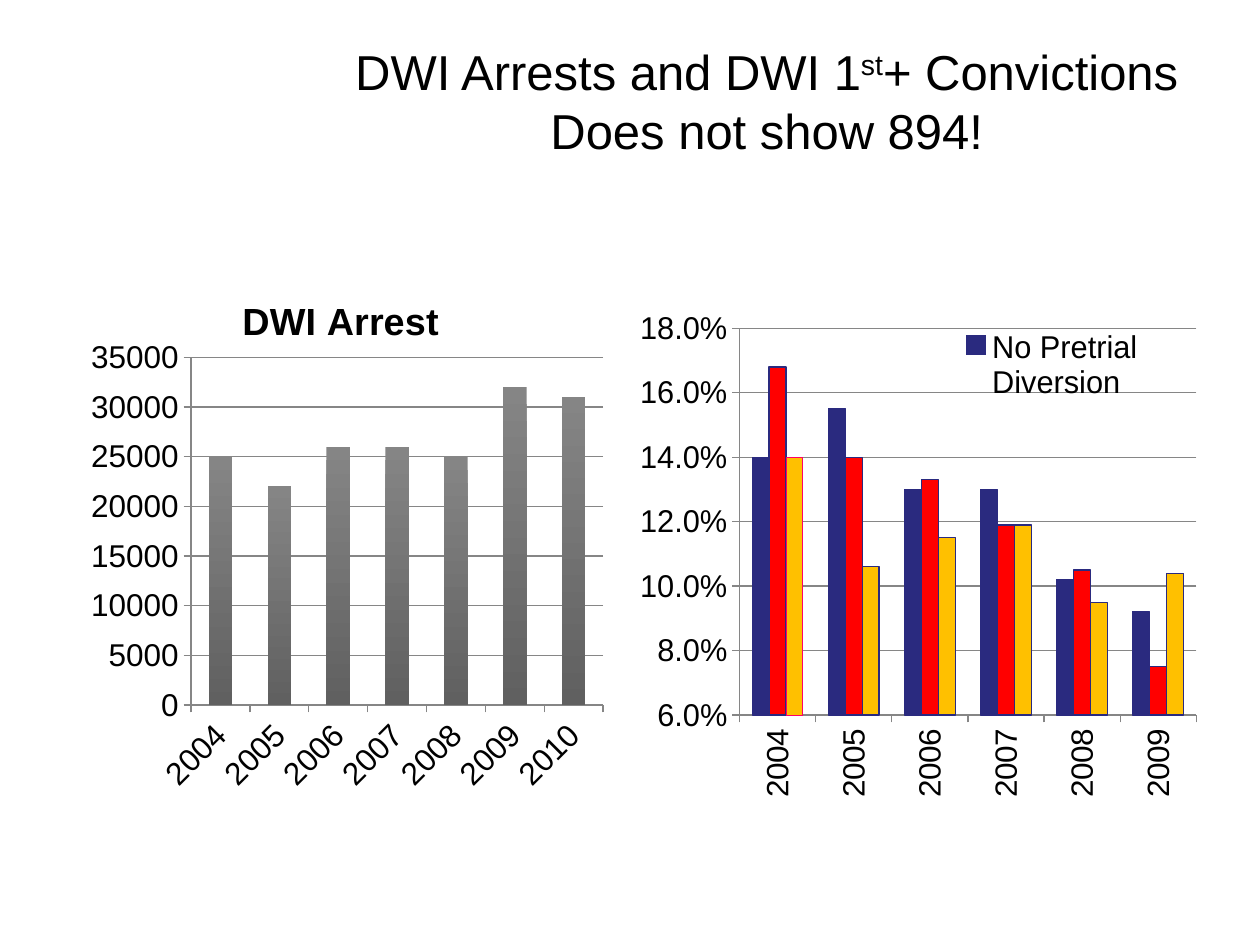
from lxml import etree
from pptx import Presentation
from pptx.chart.data import CategoryChartData
from pptx.dml.color import RGBColor
from pptx.enum.chart import XL_CHART_TYPE, XL_LEGEND_POSITION, XL_TICK_MARK
from pptx.enum.text import MSO_ANCHOR, PP_ALIGN
from pptx.oxml.ns import qn
from pptx.util import Inches, Pt

COLUMNS = XL_CHART_TYPE.COLUMN_CLUSTERED
OUTSIDE = XL_TICK_MARK.OUTSIDE
LEGEND_RIGHT = XL_LEGEND_POSITION.RIGHT
CENTER = PP_ALIGN.CENTER
MIDDLE = MSO_ANCHOR.MIDDLE

BLACK = RGBColor(0x00, 0x00, 0x00)
AXIS_GRAY = RGBColor(0x86, 0x86, 0x86)
LIGHT_GRAY = RGBColor(0x85, 0x85, 0x85)
DARK_GRAY = RGBColor(0x60, 0x60, 0x60)
NAVY = RGBColor(0x2A, 0x2A, 0x7F)
RED = RGBColor(0xFF, 0x00, 0x00)
AMBER = RGBColor(0xFF, 0xC0, 0x00)
PINK = RGBColor(0xFF, 0x00, 0x66)


def set_layout(parent, index, **fractions):
    """Place a chart part by fractions of the chart area."""
    for old in parent.findall(qn("c:layout")):
        parent.remove(old)
    layout = etree.Element(qn("c:layout"))
    manual = etree.SubElement(layout, qn("c:manualLayout"))
    if parent.tag == qn("c:plotArea"):
        etree.SubElement(manual, qn("c:layoutTarget")).set("val", "inner")
    for side in ("x", "y"):
        etree.SubElement(manual, qn(f"c:{side}Mode")).set("val", "edge")
    for side, value in fractions.items():
        etree.SubElement(manual, qn(f"c:{side}")).set("val", str(value))
    parent.insert(index, layout)


def add_columns(left, top, data, label_angle):
    """Add a column chart with the shared axis styling."""
    chart = slide.shapes.add_chart(
        COLUMNS, Inches(left), Inches(top), Inches(4.42), Inches(4.45), data).chart
    chart.font.name = "Arial"
    chart.font.size = Pt(18)
    chart.font.color.rgb = BLACK
    chart.has_title = False
    chart.has_legend = False
    plot = chart.plots[0]
    plot.gap_width = 150
    plot.overlap = 0
    plot.vary_by_categories = False
    for axis in (chart.category_axis, chart.value_axis):
        axis.major_tick_mark = OUTSIDE
        axis.format.line.color.rgb = AXIS_GRAY
        axis.tick_labels.font.size = Pt(18)
    chart.value_axis.has_major_gridlines = True
    chart.value_axis.major_gridlines.format.line.color.rgb = AXIS_GRAY
    label_body = chart.category_axis._element.find(qn("c:txPr")).find(qn("a:bodyPr"))
    label_body.set("rot", str(label_angle * 60000))
    label_body.set("vert", "horz")
    return chart


prs = Presentation()
prs.slide_width = Inches(10)
prs.slide_height = Inches(7.5)
slide = prs.slides.add_slide(prs.slide_layouts[6])

# Heading
heading = slide.shapes.add_textbox(Inches(2.67), Inches(0.17), Inches(6.83), Inches(1.25))
heading.text_frame.word_wrap = True
heading.text_frame.vertical_anchor = MIDDLE
heading_line = heading.text_frame.paragraphs[0]
heading_line.alignment = CENTER
for words in ("DWI Arrests and DWI 1", "st", "+ Convictions", "Does not show 894!"):
    if words.startswith("Does"):
        heading_line.add_line_break()
    run = heading_line.add_run()
    run.text = words
    run.font.name = "Arial"
    run.font.size = Pt(28)
    run.font.color.rgb = BLACK
    if words == "st":
        run._r.get_or_add_rPr().set("baseline", "30000")

# Arrests per year
arrest_data = CategoryChartData(number_format="General")
arrest_data.categories = [str(year) for year in range(2004, 2011)]
arrest_data.add_series("DWI Arrest", (25000, 22000, 26000, 26000, 25000, 32000, 31000))
arrests = add_columns(0.5, 2.17, arrest_data, -45)
arrests.value_axis.minimum_scale = 0
arrests.value_axis.maximum_scale = 35000
arrests.value_axis.major_unit = 5000
set_layout(arrests._chartSpace.chart.plotArea, 0, x=0.23, y=0.15, w=0.74, h=0.62)

arrests.has_title = True
arrest_title = arrests.chart_title.text_frame
arrest_title.text = "DWI Arrest"
title_font = arrest_title.paragraphs[0].runs[0].font
title_font.name = "Arial"
title_font.size = Pt(21.6)
title_font.bold = True
title_font.color.rgb = BLACK
arrests.chart_title.include_in_layout = False
set_layout(arrests.chart_title._element, 1, x=0.31, y=0.03)

arrest_fill = arrests.plots[0].series[0].format.fill
arrest_fill.gradient()
arrest_fill.gradient_angle = 270
for stop, shade in zip(arrest_fill.gradient_stops, (LIGHT_GRAY, DARK_GRAY)):
    stop.color.rgb = shade

# Conviction rates, of which only the first series is named
conviction_series = [
    ("No Pretrial Diversion", NAVY, (0.14, 0.155, 0.13, 0.13, 0.102, 0.092)),
    ("", RED, (0.168, 0.14, 0.133, 0.119, 0.105, 0.075)),
    ("", AMBER, (0.14, 0.106, 0.115, 0.119, 0.095, 0.104)),
]
conviction_data = CategoryChartData(number_format="0.0%")
conviction_data.categories = [str(year) for year in range(2004, 2010)]
for name, color, rates in conviction_series:
    conviction_data.add_series(name, rates)
convictions = add_columns(5.08, 2.25, conviction_data, -90)
rate_axis = convictions.value_axis
rate_axis.minimum_scale = 0.06
rate_axis.maximum_scale = 0.18
rate_axis.major_unit = 0.02
rate_axis.tick_labels.number_format = "0.0%"
rate_axis.tick_labels.number_format_is_linked = False
set_layout(convictions._chartSpace.chart.plotArea, 0, x=0.16, y=0.08, w=0.84, h=0.69)

for series, (name, color, rates) in zip(convictions.plots[0].series, conviction_series):
    series.format.fill.solid()
    series.format.fill.fore_color.rgb = color
    series.format.line.color.rgb = NAVY
    series.format.line.width = Pt(0.75)
first_amber = convictions.plots[0].series[2].points[0].format
first_amber.fill.solid()
first_amber.fill.fore_color.rgb = AMBER
first_amber.line.color.rgb = PINK

# Legend inside the plot, listing the named series only
convictions.has_legend = True
convictions.legend.position = LEGEND_RIGHT
convictions.legend.include_in_layout = False
convictions.legend.font.size = Pt(18)
legend_element = convictions.legend._element
set_layout(legend_element, 1, x=0.54, y=0.07, w=0.39, h=0.15)
for unnamed in (2, 1):
    entry = etree.Element(qn("c:legendEntry"))
    etree.SubElement(entry, qn("c:idx")).set("val", str(unnamed))
    etree.SubElement(entry, qn("c:delete")).set("val", "1")
    legend_element.insert(1, entry)

prs.save("out.pptx")
